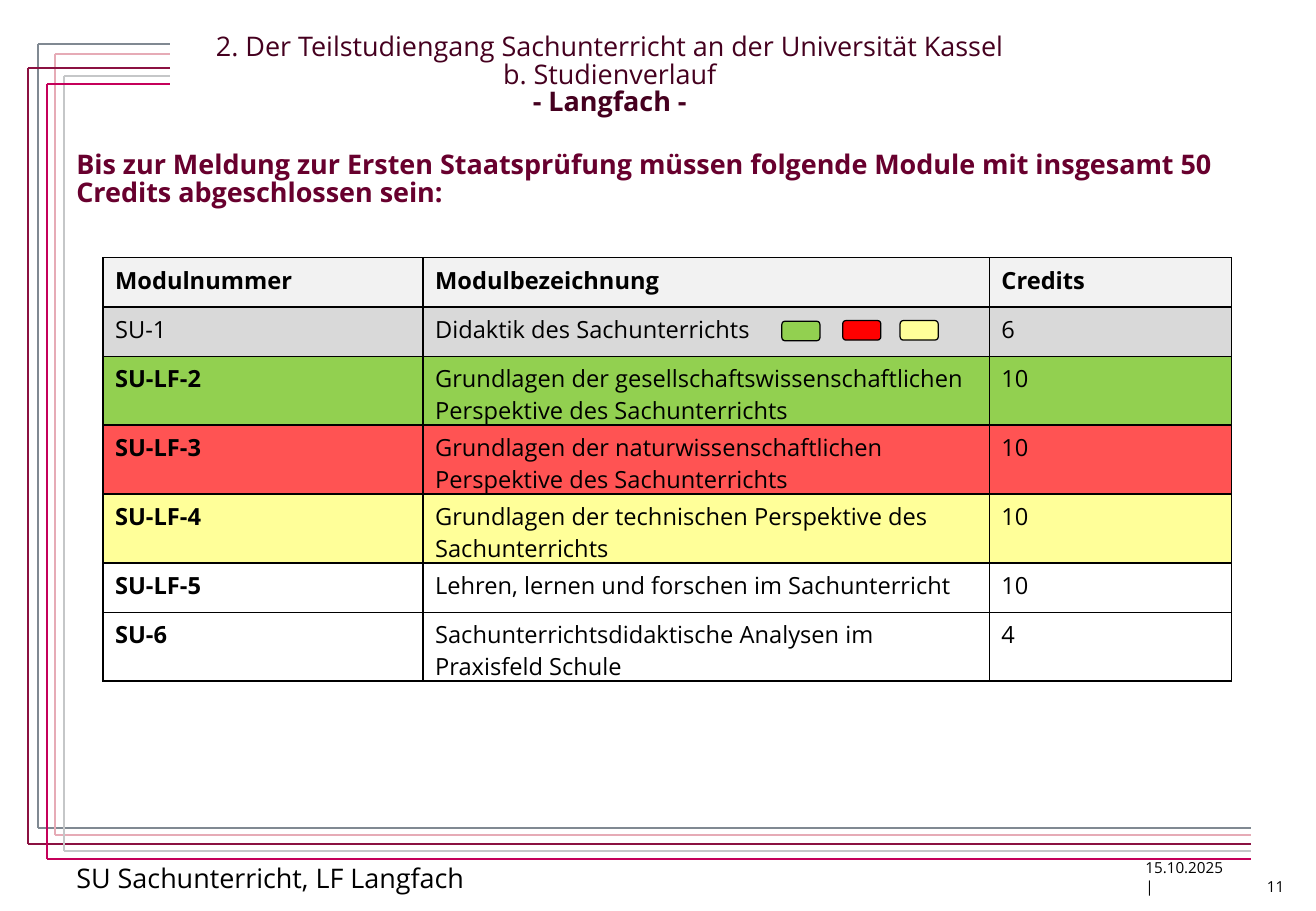
from dataclasses import dataclass

from lxml import etree
from pptx import Presentation
from pptx.dml.color import RGBColor
from pptx.enum.shapes import MSO_CONNECTOR, MSO_SHAPE
from pptx.enum.text import MSO_ANCHOR, PP_ALIGN
from pptx.oxml.ns import qn
from pptx.util import Pt

LINE = MSO_CONNECTOR.STRAIGHT
ROUND = MSO_SHAPE.ROUNDED_RECTANGLE
TOP, BOTTOM = MSO_ANCHOR.TOP, MSO_ANCHOR.BOTTOM
LEFT, CENTER = PP_ALIGN.LEFT, PP_ALIGN.CENTER
FACE = "Open Sans"
COLORS = {
    "black": "000000", "title": "45001F", "lead": "68002E",
    "slate": "808992", "pink": "E6ABB6", "wine": "8B1141",
    "silver": "C5C7C8", "berry": "C5005A",
    "head": "F2F2F2", "gray": "D9D9D9", "green": "92D050",
    "coral": "FF5353", "red": "FF0000", "yellow": "FFFF99",
}


@dataclass
class Frame:
    color: str
    left: float
    top: float
    base: float


@dataclass
class Label:
    text: str
    left: float
    top: float
    width: float
    height: float
    size: float
    color: str = "black"
    bold: bool = False
    align: PP_ALIGN = LEFT
    anchor: MSO_ANCHOR = TOP
    pad: float = 3.6
    pitch: float = 1.0
    tab: float = 0


@dataclass
class Module:
    cells: tuple[str, str, str]
    fill: str = ""
    bold: tuple[bool, bool, bool] = (True, False, False)


@dataclass
class Badge:
    color: str
    left: float
    top: float


FRAMES = [
    Frame("slate", 22.5, 26, 490.7),
    Frame("pink", 32.5, 32, 495.2),
    Frame("wine", 16.5, 40.3, 500.2),
    Frame("silver", 38, 45, 504.5),
    Frame("berry", 28, 49.8, 509),
]
TITLE = Label("2. Der Teilstudiengang Sachunterricht an der Universität Kassel"
              "\vb. Studienverlauf\v- Langfach -",
              100.8, 17.3, 521.3, 67.7, 16, "title", align=CENTER, pitch=0.84)
LABELS = [
    Label("Bis zur Meldung zur Ersten Staatsprüfung müssen folgende Module "
          "mit insgesamt 50 Credits abgeschlossen sein:",
          38.2, 86.5, 725, 48, 16, "lead", True, pitch=0.87),
    Label("SU Sachunterricht, LF Langfach", 38.2, 507, 400, 29, 16),
    Label("15.10.2025\t|", 671.8, 517.6, 74, 13, 9,
          anchor=BOTTOM, pad=0, tab=55),
    Label("11", 743.8, 517.6, 35, 13, 9, anchor=BOTTOM, pad=0),
]
MODULES = [
    Module(("Modulnummer", "Modulbezeichnung", "Credits"), "head",
           (True, True, True)),
    Module(("SU-1", "Didaktik des Sachunterrichts", "6"), "gray",
           (False, False, False)),
    Module(("SU-LF-2", "Grundlagen der gesellschaftswissenschaftlichen "
            "Perspektive des Sachunterrichts", "10"), "green"),
    Module(("SU-LF-3", "Grundlagen der naturwissenschaftlichen "
            "Perspektive des Sachunterrichts", "10"), "coral"),
    Module(("SU-LF-4", "Grundlagen der technischen Perspektive des "
            "Sachunterrichts", "10"), "yellow"),
    Module(("SU-LF-5", "Lehren, lernen und forschen im Sachunterricht", "10")),
    Module(("SU-6", "Sachunterrichtsdidaktische Analysen im "
            "Praxisfeld Schule", "4")),
]
WIDTHS = (189.7, 335.7, 143.7)
ROW = 29.2
BADGES = [
    Badge("green", 463.4, 190.4),
    Badge("red", 499.5, 190),
    Badge("yellow", 533.5, 190),
]


def rgb(name: str) -> RGBColor:
    return RGBColor.from_string(COLORS[name])


def style(para, size: float, color: str, bold: bool) -> None:
    font = para.font
    font.name, font.size, font.bold = FACE, Pt(size), bold
    font.color.rgb = rgb(color)


def rule(shapes, color: str, ends: tuple[float, ...]) -> None:
    line = shapes.add_connector(LINE, *map(Pt, ends))
    line.line.color.rgb = rgb(color)
    line.line.width = Pt(1.25)
    etree.SubElement(line._element.spPr, qn("a:effectLst"))


def border(shapes, item: Frame) -> None:
    x, y, base = item.left, item.top, item.base
    for ends in ((x, y, 100.8, y), (x, y, x, base), (x, base, 741.4, base)):
        rule(shapes, item.color, ends)


def write(shapes, item: Label):
    box = shapes.add_textbox(Pt(item.left), Pt(item.top),
                             Pt(item.width), Pt(item.height))
    frame = box.text_frame
    frame.word_wrap = True
    frame.vertical_anchor = item.anchor
    frame.margin_top = frame.margin_bottom = Pt(item.pad)
    para = frame.paragraphs[0]
    para.text = item.text
    para.alignment = item.align
    para.line_spacing = item.pitch
    if item.tab:
        tabs = etree.SubElement(para._p.get_or_add_pPr(), qn("a:tabLst"))
        etree.SubElement(tabs, qn("a:tab"), pos=str(Pt(item.tab)), algn="l")
    style(para, item.size, item.color, item.bold)
    return para


def edge(cell) -> None:
    props = cell._tc.get_or_add_tcPr()
    for side in ("lnL", "lnR", "lnT", "lnB"):
        line = etree.SubElement(props, qn(f"a:{side}"), w=str(Pt(1)))
        fill = etree.SubElement(line, qn("a:solidFill"))
        etree.SubElement(fill, qn("a:srgbClr"), val=COLORS["black"])


def grid(shapes) -> None:
    table = shapes.add_table(len(MODULES), len(WIDTHS), Pt(61), Pt(152.8),
                             Pt(sum(WIDTHS)), Pt(ROW * len(MODULES))).table
    table.first_row = table.horz_banding = False
    for col, width in zip(table.columns, WIDTHS):
        col.width = Pt(width)
    for row, item in zip(table.rows, MODULES):
        row.height = Pt(ROW)
        for cell, text, bold in zip(row.cells, item.cells, item.bold):
            edge(cell)
            if item.fill:
                cell.fill.solid()
                cell.fill.fore_color.rgb = rgb(item.fill)
            else:
                cell.fill.background()
            cell.text = text
            style(cell.text_frame.paragraphs[0], 14, "black", bold)


def mark(shapes, item: Badge) -> None:
    shape = shapes.add_shape(ROUND, Pt(item.left), Pt(item.top),
                             Pt(22.6), Pt(11.6))
    shape.shadow.inherit = False
    shape.fill.solid()
    shape.fill.fore_color.rgb = rgb(item.color)
    shape.line.color.rgb = rgb("black")
    shape.line.width = Pt(0.75)


def main() -> None:
    deck = Presentation()
    deck.slide_width, deck.slide_height = Pt(780), Pt(540)
    shapes = deck.slides.add_slide(deck.slide_layouts[6]).shapes
    for item in FRAMES:
        border(shapes, item)
    write(shapes, TITLE).runs[-1].font.bold = True
    for item in LABELS:
        write(shapes, item)
    grid(shapes)
    for item in BADGES:
        mark(shapes, item)
    deck.save("out.pptx")


if __name__ == "__main__":
    main()
